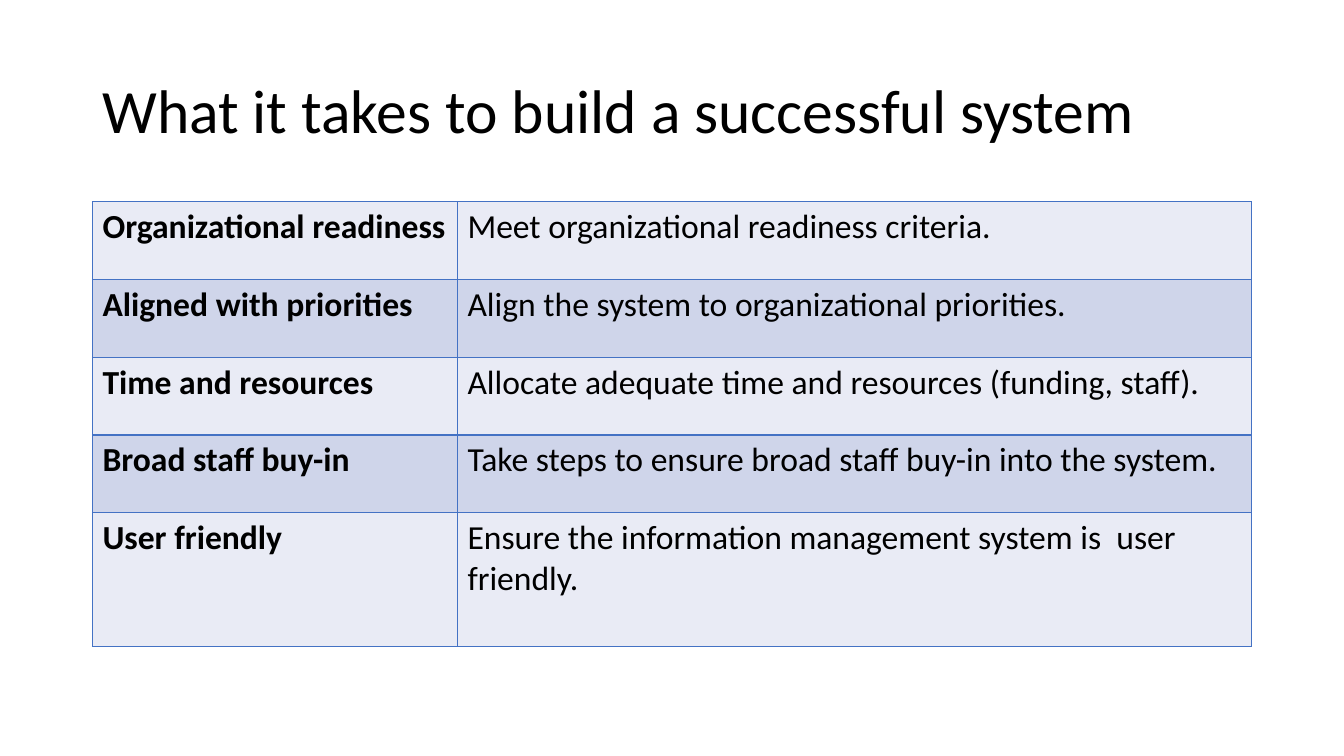
from dataclasses import dataclass

import lxml.etree
import pptx
import pptx.dml.color
import pptx.enum.text
import pptx.oxml.ns
import pptx.slide
import pptx.table
import pptx.text.text
import pptx.util

Cm = pptx.util.Cm
Pt = pptx.util.Pt


@dataclass(frozen=True)
class Theme:
    font: str = "Calibri"
    text: str = "000000"
    border: str = "4472C4"
    bands: tuple[str, str] = ("E9EBF5", "CFD5EA")
    title_size: int = 44
    table_size: int = 24
    border_width: int = 1


@dataclass(frozen=True)
class Requirement:
    name: str
    action: str
    height: float = 1.96


THEME = Theme()
LEFT = 2.33
COLUMN_WIDTHS = (9.2, 20.01)
REQUIREMENTS = (
    Requirement("Organizational readiness", "Meet organizational readiness criteria."),
    Requirement("Aligned with priorities", "Align the system to organizational priorities."),
    Requirement("Time and resources", "Allocate adequate time and resources (funding, staff)."),
    Requirement("Broad staff buy-in", "Take steps to ensure broad staff buy-in into the system."),
    Requirement("User friendly", "Ensure the information management system is  user friendly.", 3.38),
)


def add_span(para: pptx.text.text._Paragraph, text: str, size: int, bold: bool = False) -> None:
    span = para.add_run()
    span.text = text
    span.font.name = THEME.font
    span.font.size = Pt(size)
    span.font.bold = bold
    span.font.color.rgb = pptx.dml.color.RGBColor.from_string(THEME.text)


def add_title(page: pptx.slide.Slide, text: str) -> None:
    box = page.shapes.add_textbox(Cm(LEFT), Cm(1.02), Cm(sum(COLUMN_WIDTHS)), Cm(3.68))
    frame = box.text_frame
    frame.word_wrap = True
    frame.vertical_anchor = pptx.enum.text.MSO_ANCHOR.MIDDLE
    para = frame.paragraphs[0]
    para.line_spacing = 0.9
    add_span(para, text, THEME.title_size)


def add_borders(cell: pptx.table._Cell) -> None:
    qn = pptx.oxml.ns.qn
    properties = cell._tc.get_or_add_tcPr()
    for side in ("a:lnL", "a:lnR", "a:lnT", "a:lnB"):
        line = lxml.etree.SubElement(properties, qn(side), w=str(Pt(THEME.border_width)))
        fill = lxml.etree.SubElement(line, qn("a:solidFill"))
        lxml.etree.SubElement(fill, qn("a:srgbClr"), val=THEME.border)


def fill_cell(cell: pptx.table._Cell, text: str, band: str, bold: bool) -> None:
    add_borders(cell)
    cell.fill.solid()
    cell.fill.fore_color.rgb = pptx.dml.color.RGBColor.from_string(band)
    add_span(cell.text_frame.paragraphs[0], text, THEME.table_size, bold)


def add_requirements(page: pptx.slide.Slide, requirements: tuple[Requirement, ...]) -> None:
    height = sum(requirement.height for requirement in requirements)
    table = page.shapes.add_table(
        len(requirements), len(COLUMN_WIDTHS),
        Cm(LEFT), Cm(5.08), Cm(sum(COLUMN_WIDTHS)), Cm(height),
    ).table
    table.first_row = False
    table.horz_banding = False
    for column, width in zip(table.columns, COLUMN_WIDTHS):
        column.width = Cm(width)
    for index, requirement in enumerate(requirements):
        table.rows[index].height = Cm(requirement.height)
        band = THEME.bands[index % len(THEME.bands)]
        fill_cell(table.cell(index, 0), requirement.name, band, True)
        fill_cell(table.cell(index, 1), requirement.action, band, False)


def main() -> None:
    deck = pptx.Presentation()
    deck.slide_width = Cm(33.87)
    deck.slide_height = Cm(19.05)
    page = deck.slides.add_slide(deck.slide_layouts[6])
    add_title(page, "What it takes to build a successful system")
    add_requirements(page, REQUIREMENTS)
    deck.save("out.pptx")


if __name__ == "__main__":
    main()
